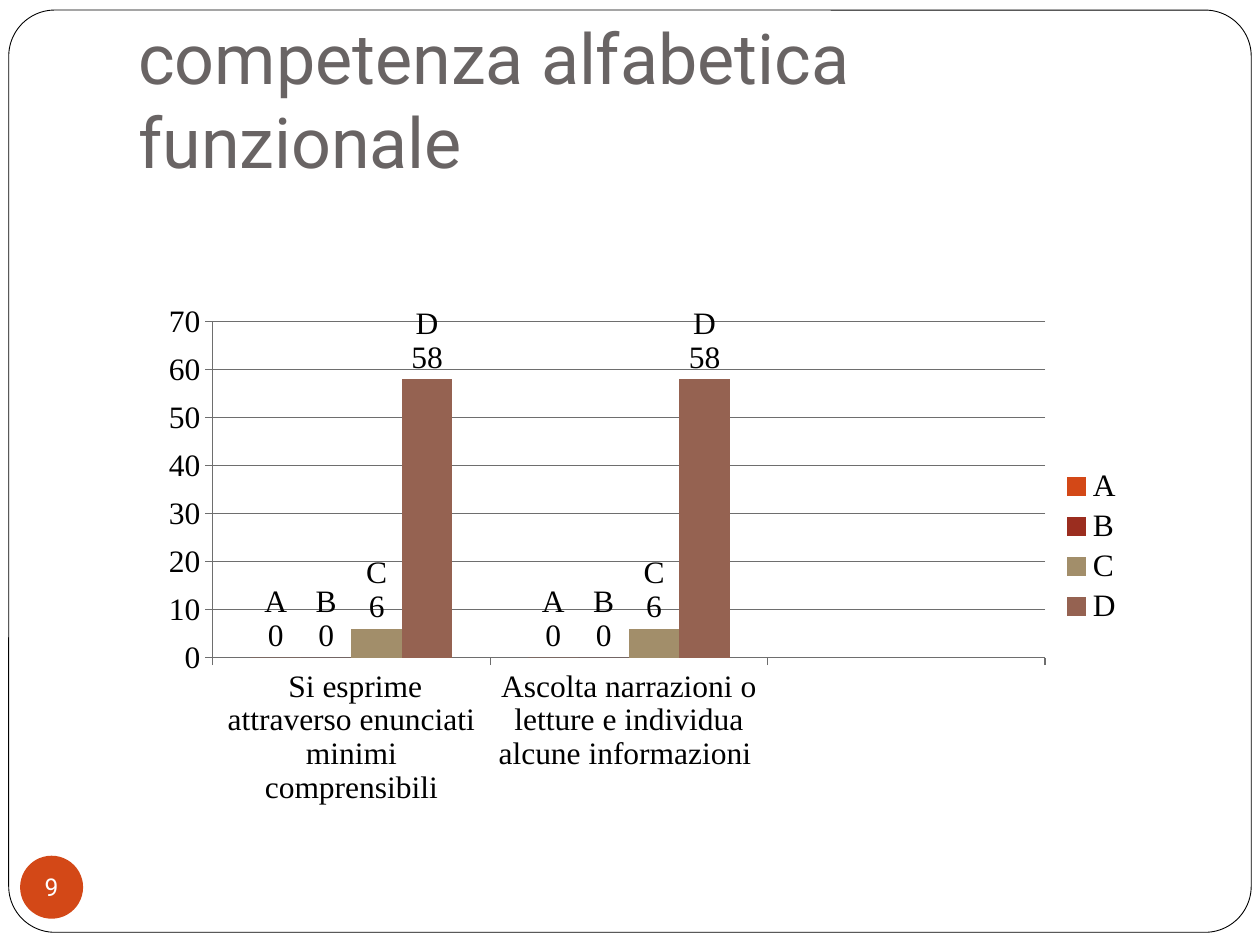
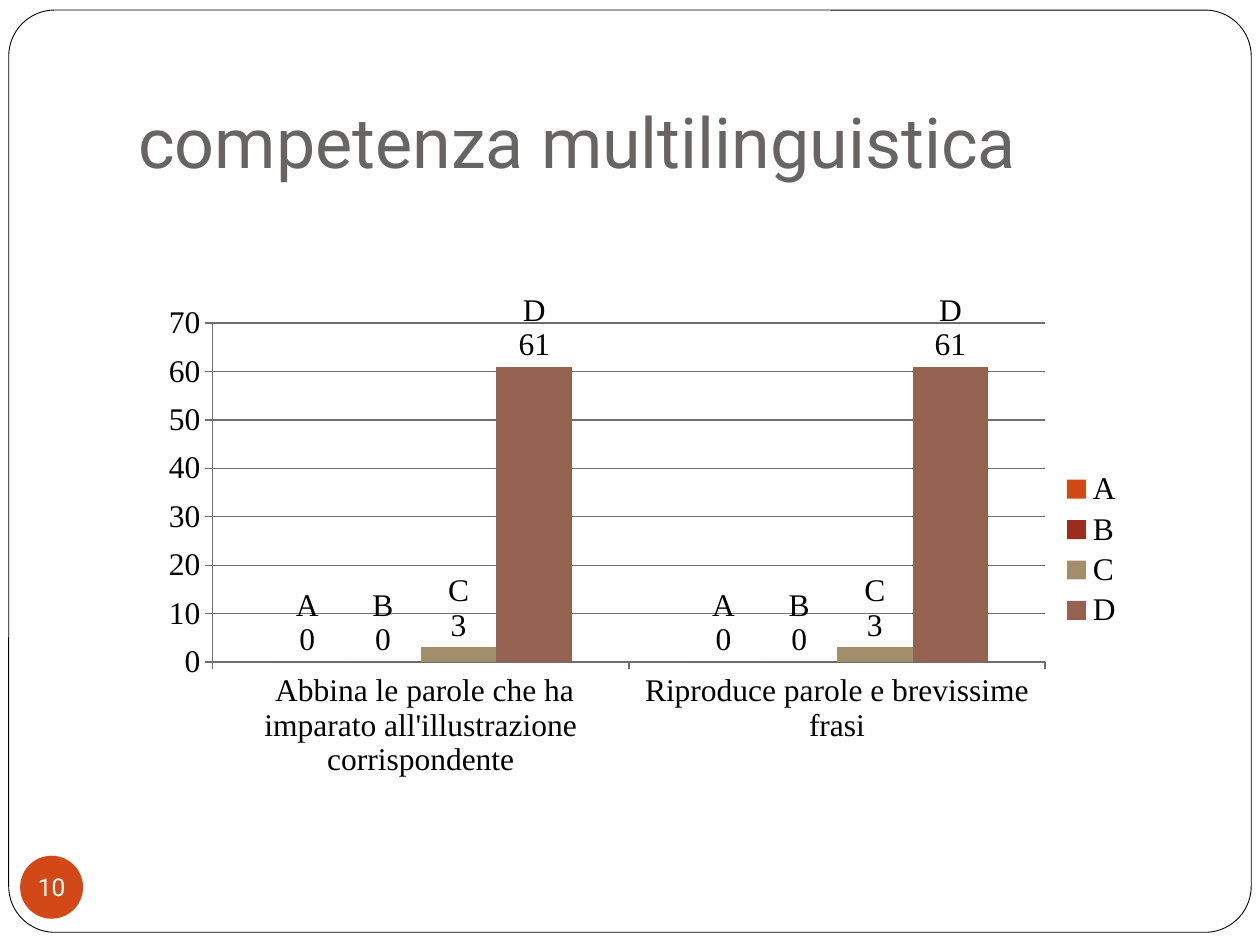
import dataclasses
import pptx
import pptx.util
import pptx.chart.data
import pptx.dml.color
import pptx.enum.chart
import pptx.enum.shapes
import pptx.enum.text
import pptx.oxml

Pt = pptx.util.Pt
Kind = pptx.enum.shapes.MSO_SHAPE
Anchor = pptx.enum.text.MSO_ANCHOR
Align = pptx.enum.text.PP_ALIGN


@dataclasses.dataclass(frozen=True)
class Theme:
    head: str = "Roboto"
    body: str = "Times New Roman"
    big: int = 40
    mid: int = 18
    small: int = 14
    ink: str = "000000"
    paper: str = "FFFFFF"
    title: str = "696464"
    badge: str = "D34817"
    rule: str = "6E6E6E"
    bars: tuple = ("D34817", "9B2D1F", "A28E6A", "956251")


THEME = Theme()
# Boxes in points: left, top, width, height
PAGE = (720, 540)
FRAME = (5, 5.75, 710, 527)
TITLE = (72, 21.6, 612, 90)
BADGE = (11.5, 489, 36, 36)
CHART = (87.84, 167.76, 561.6, 292.3)
PLOT = {"x": 0.06, "y": 0.056, "w": 0.847, "h": 0.664}

# Title, page number, categories, values for A to D
PAGES = [
    ("competenza alfabetica funzionale", 9,
     [" Si esprime attraverso enunciati minimi comprensibili",
      "Ascolta narrazioni o letture e individua alcune informazioni   ", ""],
     {"A": (0, 0, None), "B": (0, 0, None), "C": (6, 6, None), "D": (58, 58, None)}),
    ("competenza multilinguistica", 10,
     [" Abbina le parole che ha imparato all'illustrazione corrispondente",
      "Riproduce parole e brevissime frasi"],
     {"A": (0, 0), "B": (0, 0), "C": (3, 3), "D": (61, 61)}),
]


def rgb(code):
    return pptx.dml.color.RGBColor.from_string(code)


def place(box):
    return [Pt(n) for n in box]


def paint(fill, code):
    fill.solid()
    fill.fore_color.rgb = rgb(code)


def style(font, name, size, code):
    font.name, font.size = name, Pt(size)
    font.color.rgb = rgb(code)


def write(shape, text, size, code, align, anchor, inset, wrap):
    frame = shape.text_frame
    frame.text = text
    frame.word_wrap = wrap
    frame.vertical_anchor = anchor
    (frame.margin_left, frame.margin_top,
     frame.margin_right, frame.margin_bottom) = place(inset)
    para = frame.paragraphs[0]
    para.alignment = align
    style(para.runs[0].font, THEME.head, size, code)


def add_form(slide, kind, box, code):
    shape = slide.shapes.add_shape(kind, *place(box))
    shape.shadow.inherit = False
    paint(shape.fill, code)
    return shape


# Rounded page border
def add_frame(slide, box):
    shape = add_form(slide, Kind.ROUNDED_RECTANGLE, box, THEME.paper)
    shape.adjustments[0] = 0.05
    paint(shape.line.fill, THEME.ink)
    shape.line.width = Pt(0.5)


# Title, resting on the bottom of its box
def add_title(slide, box, text):
    shape = slide.shapes.add_textbox(*place(box))
    write(shape, text, THEME.big, THEME.title, Align.LEFT, Anchor.BOTTOM,
          (7.2, 3.6, 7.2, 7.2), True)


# Page number in a disc
def add_badge(slide, box, number):
    shape = add_form(slide, Kind.OVAL, box, THEME.badge)
    shape.line.fill.background()
    write(shape, str(number), THEME.small, THEME.paper, Align.CENTER,
          Anchor.MIDDLE, (0, 0, 0, 0), False)


def child(parent, tag, value):
    node = parent.makeelement(pptx.oxml.ns.qn("c:" + tag), {"val": str(value)})
    parent.append(node)


# Fixed inner plot area
def set_plot(chart):
    qn = pptx.oxml.ns.qn
    area = chart.element.find(".//" + qn("c:plotArea"))
    for old in area.findall(qn("c:layout")):
        area.remove(old)
    layout = area.makeelement(qn("c:layout"), {})
    manual = layout.makeelement(qn("c:manualLayout"), {})
    layout.append(manual)
    area.insert(0, layout)
    child(manual, "layoutTarget", "inner")
    for side in "xy":
        child(manual, side + "Mode", "edge")
    for side, part in PLOT.items():
        child(manual, side, part)


# Series name above the value
def add_labels(series):
    labels = series.data_labels
    labels.show_value = labels.show_series_name = True
    style(labels.font, THEME.body, THEME.mid, THEME.ink)
    labels.position = pptx.enum.chart.XL_LABEL_POSITION.OUTSIDE_END
    qn = pptx.oxml.ns.qn
    root = series.data_labels._element
    mark = root.makeelement(qn("c:separator"), {})
    mark.text = "\n"
    root.find(qn("c:showBubbleSize")).addnext(mark)


def add_chart(slide, box, cats, rows):
    enum = pptx.enum.chart
    data = pptx.chart.data.CategoryChartData()
    data.categories = cats
    for name, vals in rows.items():
        data.add_series(name, vals)
    chart = slide.shapes.add_chart(
        enum.XL_CHART_TYPE.COLUMN_CLUSTERED, *place(box), data).chart
    style(chart.font, THEME.body, THEME.mid, THEME.ink)
    chart.has_title = False
    chart.has_legend = True
    chart.legend.position = enum.XL_LEGEND_POSITION.RIGHT
    chart.legend.include_in_layout = False
    set_plot(chart)

    # Axes and grid
    scale = chart.value_axis
    scale.minimum_scale, scale.maximum_scale, scale.major_unit = 0, 70, 10
    scale.has_major_gridlines = True
    for axis in (chart.category_axis, scale):
        axis.major_tick_mark = enum.XL_TICK_MARK.OUTSIDE
    for part in (chart.category_axis, scale, scale.major_gridlines):
        paint(part.format.line.fill, THEME.rule)
        part.format.line.width = Pt(0.75)

    # Columns
    plot = chart.plots[0]
    plot.gap_width, plot.overlap = 150, 0
    plot.vary_by_categories = False
    for series, code in zip(plot.series, THEME.bars):
        paint(series.format.fill, code)
        add_labels(series)


def add_page(deck, title, number, cats, rows):
    slide = deck.slides.add_slide(deck.slide_layouts[6])
    paint(slide.background.fill, THEME.paper)
    add_frame(slide, FRAME)
    add_title(slide, TITLE, title)
    add_badge(slide, BADGE, number)
    add_chart(slide, CHART, cats, rows)


def main():
    deck = pptx.Presentation()
    deck.slide_width, deck.slide_height = place(PAGE)
    for page in PAGES:
        add_page(deck, *page)
    deck.save("out.pptx")


if __name__ == "__main__":
    main()
